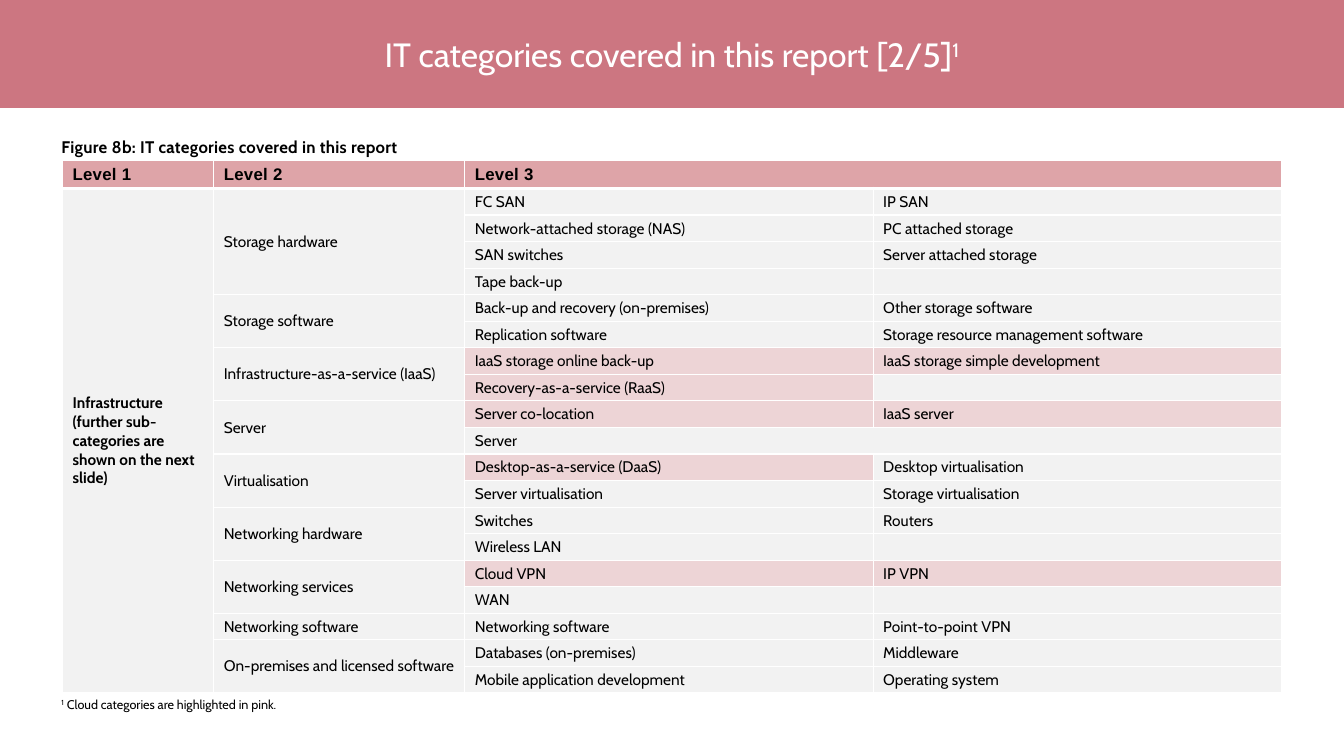
"""Build the slide listing the infrastructure IT categories covered in the report."""
from lxml.etree import SubElement
from pptx import Presentation
from pptx.dml.color import RGBColor
from pptx.enum.shapes import MSO_SHAPE as Preset
from pptx.enum.text import MSO_ANCHOR as Anchor, PP_ALIGN as Align
from pptx.oxml import parse_xml
from pptx.oxml.ns import nsdecls, qn
from pptx.util import Inches, Pt

hex_colour = RGBColor.from_string
HEADER, GREY, PINK, BANNER = "DEA4A8", "F2F2F2", "EDD4D6", "CC7681"
WHITE, BLACK = "FFFFFF", "000000"


def add_text(paragraph, text, size, colour=BLACK, name="Cabin", bold=False, **attributes):
    run = paragraph.add_run()
    run.text = text
    for key, value in {"size": Pt(size), "name": name, "bold": bold}.items():
        setattr(run.font, key, value)
    run.font.color.rgb = hex_colour(colour)
    for key, value in attributes.items():
        run.font._element.set(key, value)


def style_cell(cell, fill, bottom=1):
    cell.fill.solid()
    cell.fill.fore_color.rgb = hex_colour(fill)
    cell.vertical_anchor = Anchor.MIDDLE
    cell.margin_top = cell.margin_bottom = Inches(0.04)
    properties = cell._tc.get_or_add_tcPr()
    for index, (side, width) in enumerate({"L": 1, "R": 1, "T": 1, "B": bottom}.items()):
        properties.insert(index, parse_xml(
            f'<a:ln{side} {nsdecls("a")} w="{Pt(width)}"><a:solidFill>'
            f'<a:srgbClr val="{WHITE}"/></a:solidFill></a:ln{side}>'))


GROUPS = {
    "Storage hardware": [
        ("FC SAN", "IP SAN"),
        ("Network-attached storage (NAS)", "PC attached storage"),
        ("SAN switches", "Server attached storage"),
        ("Tape back-up", ""),
    ],
    "Storage software": [
        ("Back-up and recovery (on-premises)", "Other storage software"),
        ("Replication software", "Storage resource management software"),
    ],
    "Infrastructure-as-a-service (IaaS)": [
        ("IaaS storage online back-up", "IaaS storage simple development"),
        ("Recovery-as-a-service (RaaS)", ""),
    ],
    "Server": [("Server co-location", "IaaS server"), ("Server",)],
    "Virtualisation": [
        ("Desktop-as-a-service (DaaS)", "Desktop virtualisation"),
        ("Server virtualisation", "Storage virtualisation"),
    ],
    "Networking hardware": [("Switches", "Routers"), ("Wireless LAN", "")],
    "Networking services": [("Cloud VPN", "IP VPN"), ("WAN", "")],
    "Networking software": [("Networking software", "Point-to-point VPN")],
    "On-premises and licensed software": [
        ("Databases (on-premises)", "Middleware"),
        ("Mobile application development", "Operating system"),
    ],
}
CLOUD = {
    "IaaS storage online back-up", "IaaS storage simple development",
    "Recovery-as-a-service (RaaS)", "Server co-location", "IaaS server",
    "Desktop-as-a-service (DaaS)", "Cloud VPN", "IP VPN",
}

presentation = Presentation()
presentation.slide_width, presentation.slide_height = Inches(13.33), Inches(7.5)
slide = presentation.slides.add_slide(presentation.slide_layouts[6])

banner = slide.shapes.add_shape(
    Preset.RECTANGLE, 0, 0, presentation.slide_width, Inches(1.07))
banner.shadow.inherit = False
banner.fill.solid()
banner.fill.fore_color.rgb = hex_colour(BANNER)
banner.line.fill.background()
banner.text_frame.vertical_anchor = Anchor.MIDDLE
title = banner.text_frame.paragraphs[0]
title.alignment = Align.CENTER
add_text(title, "IT categories covered in this report [2/5]", 24, WHITE)
add_text(title, "1", 24, WHITE, baseline="30000")

captions = []
for top, width, height in [(1.31, 12.1, 0.28), (6.86, 8.48, 0.55)]:
    box = slide.shapes.add_textbox(Inches(0.61), Inches(top), Inches(width), Inches(height))
    frame = box.text_frame
    frame.word_wrap = True
    frame.margin_left = frame.margin_right = 0
    captions.append(frame.paragraphs[0])
heading, footnote = captions
add_text(heading, "Figure 8b: IT categories covered in this report", 12, bold=True, spc="20")
add_text(footnote, "1", 9, baseline="30000")
add_text(footnote, " Cloud categories are highlighted in pink.", 9)

row_count = 1 + sum(len(rows) for rows in GROUPS.values())
table = slide.shapes.add_table(
    row_count, 4, Inches(0.62), Inches(1.59), Inches(12.1), Inches(5.26)).table
table.first_row = table.horz_banding = False
for column, width in zip(table.columns, [1.5, 2.49, 4.05, 4.05]):
    column.width = Inches(width)
for row_index, row in enumerate(table.rows):
    row.height = Inches(5.26 / row_count)
    for cell in row.cells:
        is_header = row_index == 0
        style_cell(cell, HEADER if is_header else GREY, 3 if is_header else 1)
        ending = SubElement(cell.text_frame.paragraphs[0]._p, qn("a:endParaRPr"), sz="1100")
        SubElement(ending, qn("a:latin"), typeface="Cabin")

for level in (1, 2, 3):
    paragraph = table.cell(0, level - 1).text_frame.paragraphs[0]
    add_text(paragraph, f"Level {level}", 12, name="Arial", bold=True, spc="20")
table.cell(0, 2).merge(table.cell(0, 3))

infrastructure = table.cell(1, 0)
infrastructure.merge(table.cell(row_count - 1, 0))
add_text(infrastructure.text_frame.paragraphs[0], "Infrastructure", 11, bold=True)
add_text(infrastructure.text_frame.add_paragraph(),
         "(further sub-categories are shown on the next slide)", 11, bold=True)

first = 1
for group, rows in GROUPS.items():
    group_cell = table.cell(first, 1)
    add_text(group_cell.text_frame.paragraphs[0], group, 11)
    if len(rows) > 1:
        group_cell.merge(table.cell(first + len(rows) - 1, 1))
    for row_index, names in enumerate(rows, first):
        for column_index, name in enumerate(names, 2):
            cell = table.cell(row_index, column_index)
            if name:
                add_text(cell.text_frame.paragraphs[0], name, 11)
            if name in CLOUD:
                cell.fill.fore_color.rgb = hex_colour(PINK)
        if len(names) == 1:
            table.cell(row_index, 2).merge(table.cell(row_index, 3))
    first += len(rows)

presentation.save("out.pptx")
